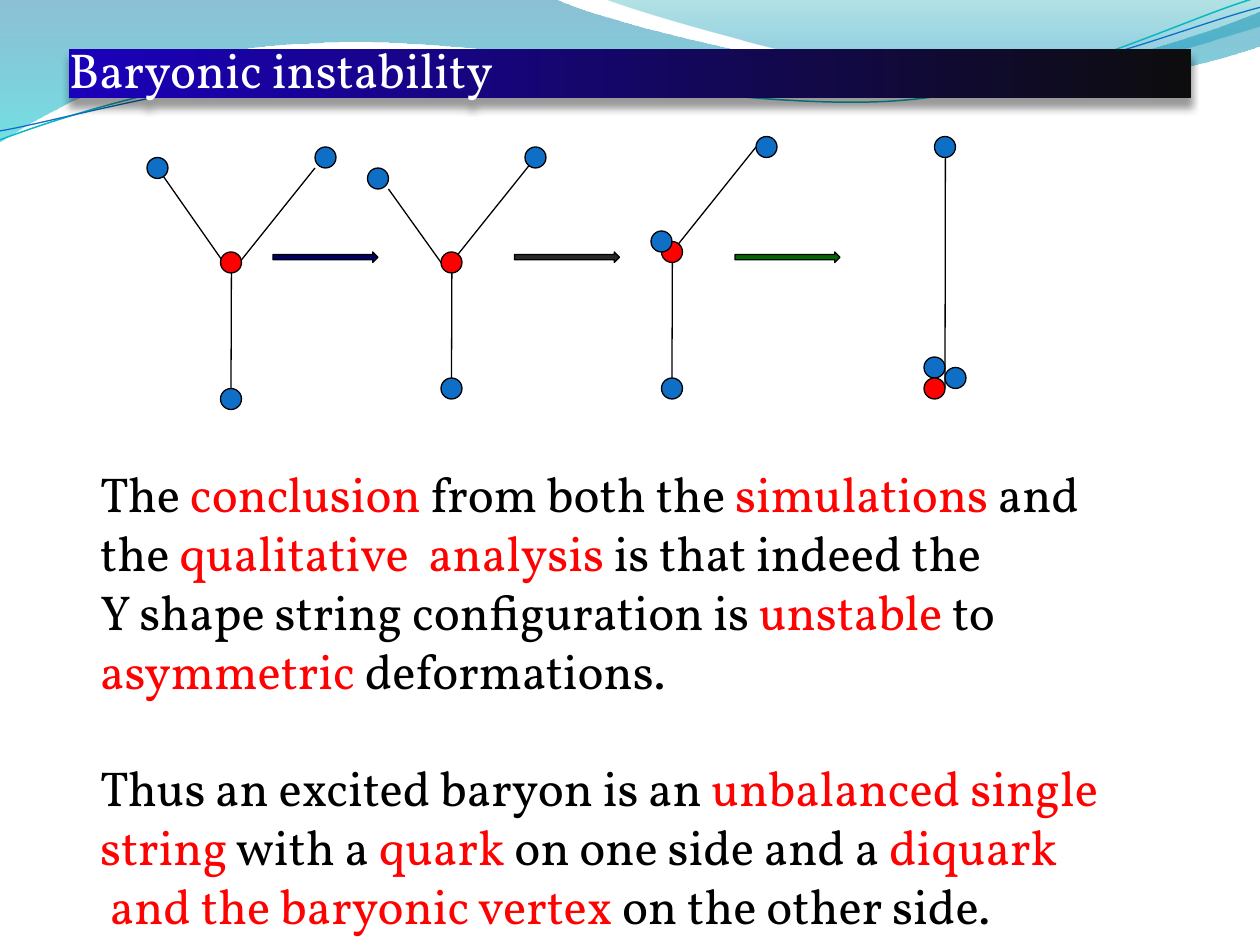
from lxml import etree
from pptx import Presentation
from pptx.dml.color import RGBColor
from pptx.enum.shapes import MSO_CONNECTOR, MSO_SHAPE
from pptx.enum.text import MSO_ANCHOR, MSO_AUTO_SIZE, PP_ALIGN
from pptx.oxml.ns import qn
from pptx.util import Cm, Pt

STRAIGHT = MSO_CONNECTOR.STRAIGHT
ELLIPSE = MSO_SHAPE.OVAL
ARROW = MSO_SHAPE.RIGHT_ARROW
RECTANGLE = MSO_SHAPE.RECTANGLE
LEFT = PP_ALIGN.LEFT
BOTTOM = MSO_ANCHOR.BOTTOM
GROW = MSO_AUTO_SIZE.SHAPE_TO_FIT_TEXT

FONT = "Vollkorn"
BLACK, WHITE = "000000", "FFFFFF"
QUARK, VERTEX, EMPHASIS = "0F6FC6", "FF0000", "FF0101"
GRID = 2.54 / 12
BALL = 2

WIDE_WAVE = [
    (0, 0), (11.18, -0.03),
    (12.09, 0.43, 16.87, 1.6, 19.25, 1.6), (21.67, 1.6, 24.33, 0.66, 25.4, 0.23),
    (25.43, 0.91),
    (24.97, 1.12, 22.1, 1.93, 18.95, 1.91), (15.8, 1.91, 9.7, 0.71, 6.53, 0.86),
    (3.28, 0.91, 1.17, 2.11, -0.03, 2.87), (0, 0),
]
RIGHT_WAVE = [
    (12.17, -0.03),
    (12.93, 0.28, 17.32, 1.57, 19.53, 1.65), (21.74, 1.75, 24.41, 0.81, 25.4, 0.53),
    (25.4, 0), (12.17, -0.03),
]
TEAL_STRAND = [
    (0, 2.82),
    (1.22, 2.36, 4.01, 1.45, 7.04, 1.32), (10.03, 1.19, 15.06, 2.26, 18.11, 2.03),
    (21.16, 1.8, 23.83, 0.38, 25.35, -0.05),
]
BLUE_STRAND = [
    (0, 2.64),
    (1.19, 2.44, 4.17, 1.55, 7.19, 1.42), (10.24, 1.3, 15.16, 2.13, 18.21, 1.9),
    (21.23, 1.7, 23.9, 0.53, 25.4, 0.15),
]

STAGES = [
    ([(15, 16, 22, 26), (22.04, 26, 22, 38), (22, 26, 30, 16)],
     [(14, 15, QUARK), (30, 14, QUARK), (21, 37, QUARK), (21, 24, VERTEX)]),
    ([(43, 25, 51, 15), (43.04, 25, 43, 37), (37, 18, 42, 25)],
     [(50, 14, QUARK), (42, 36, QUARK), (42, 24, VERTEX), (35, 16, QUARK)]),
    ([(64, 24, 72, 14), (64.04, 24, 64, 36)],
     [(63, 23, VERTEX), (63, 36, QUARK), (72, 13, QUARK), (62, 22, QUARK)]),
    ([(90.04, 15, 90, 37)],
     [(89, 13, QUARK), (88, 34, QUARK), (90, 35, QUARK), (88, 36, VERTEX)]),
]
ARROWS = [(26, "000066"), (49, "292929"), (70, "006600")]

CONCLUSION = [
    "The |conclusion| from both the |simulations| and",
    "the |qualitative  analysis |is that indeed the",
    "Y shape string configuration is |unstable| to",
    "|asymmetric| deformations.",
    "Thus an excited baryon is an |unbalanced single",
    "|string| with a |quark| on one side and a |diquark",
    "| and the baryonic vertex| on the other side.",
]
SECOND_THOUGHT = 4


def color(code):
    return RGBColor.from_string(code)


def grid(*steps):
    return [Cm(step * GRID) for step in steps]


def outline(line, code, width):
    line.color.rgb = color(code)
    line.width = Pt(width)


def set_alpha(node, percent):
    etree.SubElement(node, qn("a:alpha"), val=str(percent * 1000))


def gradient(shape, stops, angle):
    shape.fill.gradient()
    shape.fill.gradient_angle = angle
    for stop, (position, code) in zip(shape.fill.gradient_stops, stops):
        stop.position = position
        stop.color.rgb = color(code)


def add_curve(page, segments):
    anchors = [(Cm(segment[-2]), Cm(segment[-1])) for segment in segments]
    builder = page.shapes.build_freeform(*anchors[0])
    builder.add_line_segments(anchors[1:], close=anchors[0] == anchors[-1])
    shape = builder.convert_to_shape()
    shape.shadow.inherit = False
    steps = list(shape.element.spPr.iter(qn("a:lnTo")))
    for step, segment in zip(steps, segments[1:]):
        if len(segment) == 6:
            bend(step, segment, shape.left, shape.top)
    return shape


def bend(step, segment, left, top):
    step.tag = qn("a:cubicBezTo")
    for index in (0, 2):
        control = etree.Element(qn("a:pt"), x=str(Cm(segment[index]) - left),
                                y=str(Cm(segment[index + 1]) - top))
        step.insert(index // 2, control)


def add_wave(page, segments, stops, opacities):
    wave = add_curve(page, segments)
    gradient(wave, stops, 270)
    for node, opacity in zip(wave.element.spPr.iter(qn("a:srgbClr")), opacities):
        set_alpha(node, opacity)
    wave.line.fill.background()


def add_strand(page, segments, code, width):
    strand = add_curve(page, segments)
    strand.fill.background()
    outline(strand.line, code, width)


def add_symbol(page, kind, bounds, code):
    symbol = page.shapes.add_shape(kind, *grid(*bounds))
    symbol.shadow.inherit = False
    symbol.fill.solid()
    symbol.fill.fore_color.rgb = color(code)
    outline(symbol.line, BLACK, 0.75)


def add_string(page, ends):
    string = page.shapes.add_connector(STRAIGHT, *grid(*ends))
    outline(string.line, BLACK, 0.75)
    etree.SubElement(string.element.spPr, qn("a:effectLst"))


def add_title(page, text):
    bar = page.shapes.add_shape(RECTANGLE, Cm(1.39), Cm(0.99), Cm(22.63), Cm(0.99))
    bar.shadow.inherit = False
    gradient(bar, [(0, "1B00BC"), (1, "0D0D0D")], 0)
    bar.line.fill.background()
    effects = bar.element.spPr.find(qn("a:effectLst"))
    shadow = etree.SubElement(effects, qn("a:outerShdw"), blurRad=str(Pt(4)),
                              dist=str(Pt(5)), dir="5400000", rotWithShape="0")
    set_alpha(etree.SubElement(shadow, qn("a:srgbClr"), val=BLACK), 40)
    frame = bar.text_frame
    frame.margin_left = frame.margin_right = frame.margin_bottom = 0
    frame.vertical_anchor = BOTTOM
    para = frame.paragraphs[0]
    para.text = text
    para.alignment = LEFT
    set_font(para, WHITE)


def set_font(para, code):
    para.font.name = FONT
    para.font.size = Pt(28)
    para.font.color.rgb = color(code)


def add_conclusion(page, lines):
    box = page.shapes.add_textbox(Cm(1.77), Cm(9.22), Cm(23.5), Cm(9.83))
    frame = box.text_frame
    frame.word_wrap = True
    frame.auto_size = GROW
    for index, line in enumerate(lines):
        para = frame.paragraphs[0] if index == 0 else frame.add_paragraph()
        if index == SECOND_THOUGHT:
            para.space_before = Pt(33.6)
        set_font(para, BLACK)
        for part, text in enumerate(line.split("|")):
            if text:
                span = para.add_run()
                span.text = text
                if part % 2:
                    span.font.color.rgb = color(EMPHASIS)


def main():
    deck = Presentation()
    deck.slide_width, deck.slide_height = Cm(25.4), Cm(19.05)
    page = deck.slides.add_slide(deck.slide_layouts[6])
    add_wave(page, WIDE_WAVE, [(0, "0074A1"), (1, "00C6CF")], (45, 55))
    add_wave(page, RIGHT_WAVE, [(0, "00A1A9"), (0.8, "008BBF")], (30, 45))
    add_strand(page, TEAL_STRAND, "0AB8BF", 0.85)
    add_strand(page, BLUE_STRAND, QUARK, 0.75)
    add_title(page, "Baryonic instability")
    for strings, balls in STAGES:
        for ends in strings:
            add_string(page, ends)
        for left, top, code in balls:
            add_symbol(page, ELLIPSE, (left, top, BALL, BALL), code)
    for left, code in ARROWS:
        add_symbol(page, ARROW, (left, 24, 10, 1), code)
    add_conclusion(page, CONCLUSION)
    deck.save("out.pptx")


if __name__ == "__main__":
    main()
